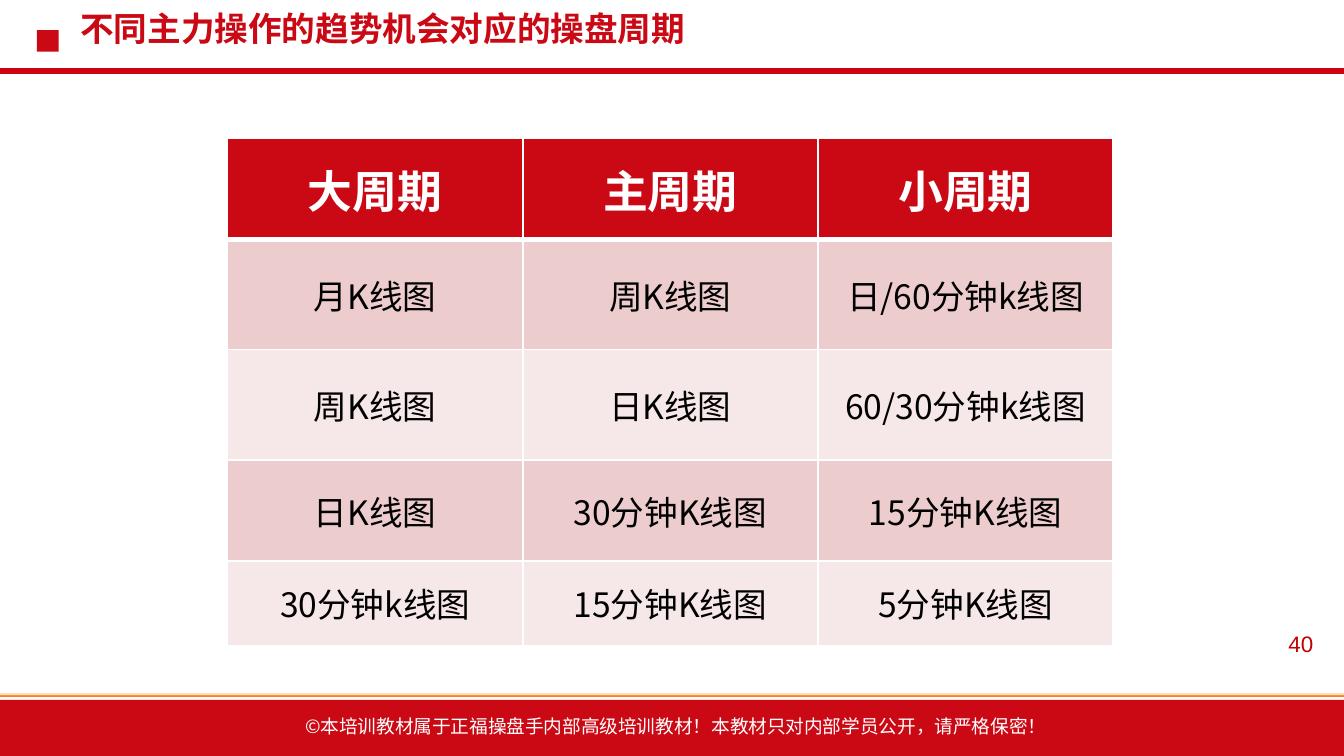
import pptx
import pptx.util
import pptx.dml.color
import pptx.enum.shapes
import pptx.enum.text
import pptx.oxml
import pptx.oxml.ns
from lxml import etree

Cm, Pt = pptx.util.Cm, pptx.util.Pt
qn = pptx.oxml.ns.qn

HUES = {"red": "CA0915", "rule": "CA0410", "page": "C00000", "gold": "FF8421",
        "dark": "ECCCCC", "light": "F6E7E8", "white": "FFFFFF", "black": "000000"}
SANS = "Noto Sans CJK SC"
WIDE, HIGH = 25.4, 14.29

ROWS = [
    ["大周期", "主周期", "小周期"],
    ["月K线图", "周K线图", "日/60分钟k线图"],
    ["周K线图", "日K线图", "60/30分钟k线图"],
    ["日K线图", "30分钟K线图", "15分钟K线图"],
    ["30分钟k线图", "15分钟K线图", "5分钟K线图"],
]
# The second and third rows hold two lines of text
TALL = [1.9, 2.09, 2.09, 1.9, 1.6]


def tint(hue):
    return pptx.dml.color.RGBColor.from_string(HUES[hue])


def style(para, size, hue, face=SANS, bold=False):
    font = para.font
    font.size, font.bold, font.name = Pt(size), bold, face
    font.color.rgb = tint(hue)
    # East Asian glyphs need their own typeface entry
    base = para._p.get_or_add_pPr().get_or_add_defRPr()
    etree.SubElement(base, qn("a:ea")).set("typeface", SANS)


def block(slide, box, hue, alpha=None):
    kind = pptx.enum.shapes.MSO_SHAPE.RECTANGLE
    rect = slide.shapes.add_shape(kind, *map(Cm, box))
    rect.shadow.inherit = False
    rect.fill.solid()
    rect.fill.fore_color.rgb = tint(hue)
    rect.line.fill.background()
    if alpha:
        clr = rect._element.spPr.find(".//" + qn("a:srgbClr"))
        etree.SubElement(clr, qn("a:alpha")).set("val", str(alpha * 1000))


def rule(slide, x, y, w, hue, width):
    kind = pptx.enum.shapes.MSO_CONNECTOR.STRAIGHT
    line = slide.shapes.add_connector(kind, Cm(x), Cm(y), Cm(x + w), Cm(y))
    line.line.color.rgb = tint(hue)
    line.line.width = Pt(width)
    etree.SubElement(line._element.spPr, qn("a:effectLst"))


def label(slide, box, text, size, hue, face=SANS, bold=False, left=0.25):
    frame = slide.shapes.add_textbox(*map(Cm, box)).text_frame
    frame.word_wrap = True
    frame.margin_left = Cm(left)
    frame.text = text
    style(frame.paragraphs[0], size, hue, face, bold)


def edge(cell, row):
    # White borders, thicker under the header row
    props = cell._tc.get_or_add_tcPr()
    wide = {"L": 1, "R": 1, "T": 3 if row == 1 else 1, "B": 3 if row == 0 else 1}
    for spot, (side, width) in enumerate(wide.items()):
        line = etree.Element(qn("a:ln" + side), w=str(Pt(width)))
        fill = etree.SubElement(line, qn("a:solidFill"))
        etree.SubElement(fill, qn("a:srgbClr")).set("val", HUES["white"])
        props.insert(spot, line)


def footer(slide, x, y, w, h):
    block(slide, (x, y + 0.1, w, h - 0.1), "red")
    rule(slide, x, y, w, "gold", 2.25)
    # Veil over the page, softening the upper half of the gold line
    block(slide, (x, 0, w, y + 0.01), "white", alpha=70)
    label(slide, (x + 5.77, y + 0.26, 19.2, 0.64),
          "©本培训教材属于正福操盘手内部高级培训教材！本教材只对内部学员公开，请严格保密！",
          10, "white", left=0)
    label(slide, (x + 24.1, y - 1.34, 1.3, 0.76), "40", 12, "page", "Arial")


def header(slide, x, y, w, h):
    block(slide, (x + 0.7, y + 0.57, 0.41, 0.41), "red")
    rule(slide, x, y + h, w, "rule", 3)
    label(slide, (x + 1.27, y + 0.03, w - 2.54, 1.47),
          "不同主力操作的趋势机会对应的操盘周期", 18, "red", "Arial", True)


def grid(slide, x, y, w, h):
    table = slide.shapes.add_table(len(ROWS), len(ROWS[0]),
                                   *map(Cm, (x, y, w, h))).table
    for col in table.columns:
        col.width = Cm(w / len(ROWS[0]))
    for r, texts in enumerate(ROWS):
        table.rows[r].height = Cm(TALL[r])
        head = r == 0
        hue = "red" if head else "dark" if r % 2 else "light"
        for c, text in enumerate(texts):
            cell = table.cell(r, c)
            cell.text = text
            cell.vertical_anchor = pptx.enum.text.MSO_ANCHOR.MIDDLE
            cell.fill.solid()
            cell.fill.fore_color.rgb = tint(hue)
            edge(cell, r)
            para = cell.text_frame.paragraphs[0]
            para.alignment = pptx.enum.text.PP_ALIGN.CENTER
            style(para, 24 if head else 18, "white" if head else "black", bold=head)


def main():
    deck = pptx.Presentation()
    deck.slide_width, deck.slide_height = Cm(WIDE), Cm(HIGH)
    slide = deck.slides.add_slide(deck.slide_layouts[6])
    footer(slide, 0, 13.13, WIDE, HIGH - 13.13)
    header(slide, 0, 0, WIDE, 1.34)
    grid(slide, 4.3, 2.62, 16.74, sum(TALL))
    deck.save("out.pptx")


if __name__ == "__main__":
    main()
